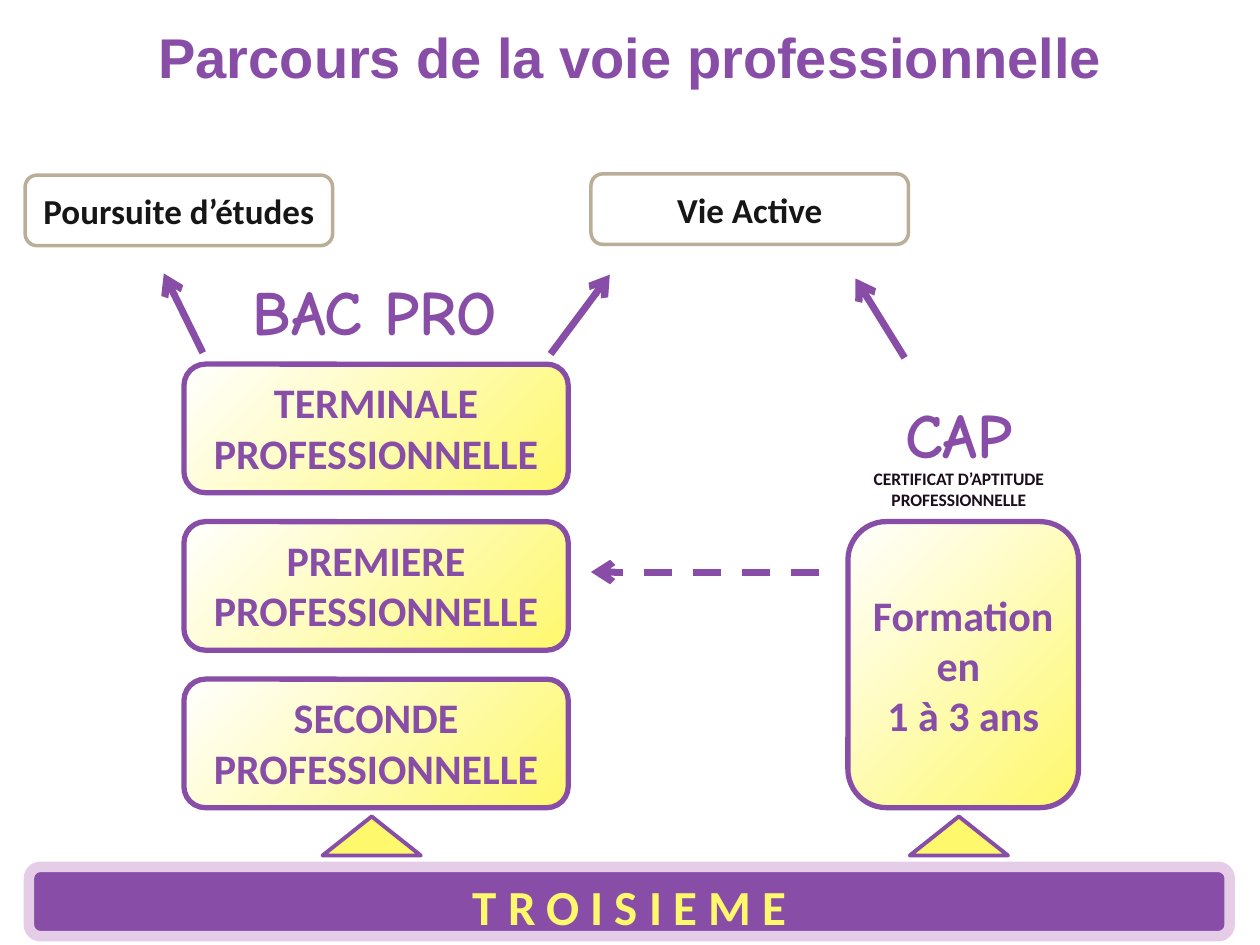
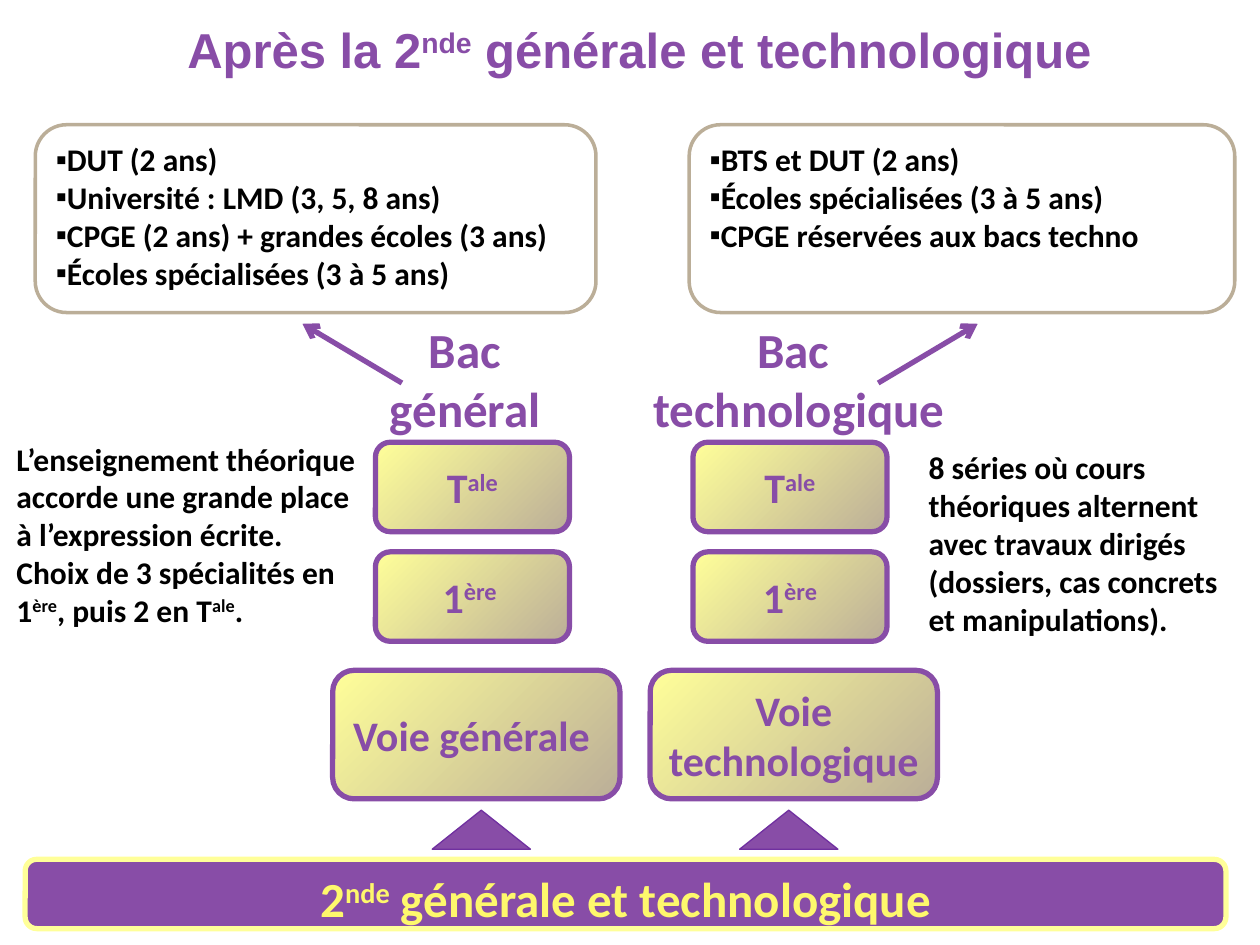
from dataclasses import dataclass, replace

from lxml import etree
from pptx import Presentation
from pptx.dml.color import RGBColor
from pptx.enum.dml import MSO_LINE_DASH_STYLE
from pptx.enum.shapes import MSO_CONNECTOR, MSO_SHAPE
from pptx.enum.text import MSO_ANCHOR, MSO_AUTO_SIZE, PP_ALIGN
from pptx.oxml.ns import qn
from pptx.util import Emu, Pt

ROUNDED, TRIANGLE = MSO_SHAPE.ROUNDED_RECTANGLE, MSO_SHAPE.ISOSCELES_TRIANGLE
STRAIGHT, DASH = MSO_CONNECTOR.STRAIGHT, MSO_LINE_DASH_STYLE.DASH
TOP, MIDDLE = MSO_ANCHOR.TOP, MSO_ANCHOR.MIDDLE
LEFT, CENTER = PP_ALIGN.LEFT, PP_ALIGN.CENTER
NO_AUTOFIT = MSO_AUTO_SIZE.NONE

EMU_PER_PX = 9144  # 100 px to the inch
TITLE_ONLY, TWO_CONTENT = 5, 3

PURPLE, YELLOW, PALE_YELLOW = "884DA7", "FEF86C", "FFFF99"
TAUPE, LILAC, DARK_PURPLE = "BBAE98", "E6CDE7", "7030A0"
WHITE, BLACK, INK, PLUM_BLACK = "FFFFFF", "000000", "161616", "1B0D1C"


def px(length):
    return Emu(round(length * EMU_PER_PX))


def rgb(value):
    return RGBColor.from_string(value)


@dataclass(frozen=True)
class TextStyle:
    size: int
    color: str = PURPLE
    font: str = "Calibri"
    align: int = CENTER
    spacing: float = 1.0


STEP = TextStyle(24)
DIPLOMA = TextStyle(28)
DIPLOMA_HAND = TextStyle(36, font="Comic Neue")
BAND = TextStyle(28, YELLOW)
OUTCOME = TextStyle(20, INK)
CAPTION = TextStyle(10, PLUM_BLACK)
NOTE = TextStyle(18, BLACK, align=LEFT)


class Page:
    """One slide, with the diagram's style of steps, bands, frames and arrows."""

    def __init__(self, deck, layout):
        self.slide = deck.slides.add_slide(deck.slide_layouts[layout])
        self.shapes = self.slide.shapes

    def add_lines(self, frame, lines, style, anchor=TOP):
        """Add one paragraph per line; text between carets is superscript."""
        frame.auto_size = NO_AUTOFIT
        frame.vertical_anchor = anchor
        frame.margin_left = frame.margin_right = px(9)
        frame.margin_top = frame.margin_bottom = px(5)
        for line in lines:
            para = frame.add_paragraph() if frame.text else frame.paragraphs[0]
            para.alignment = style.align
            para.line_spacing = style.spacing
            para.space_before = Pt(0)
            para.font.name = style.font
            para.font.size = Pt(style.size)
            para.font.bold = True
            para.font.color.rgb = rgb(style.color)
            for index, piece in enumerate(line.split("^")):
                if piece:
                    span = para.add_run()
                    span.text = piece
                    if index % 2:
                        span._r.get_or_add_rPr().set("baseline", "30000")

    def place(self, shape, left, top, width, height):
        shape.left, shape.top = px(left), px(top)
        shape.width, shape.height = px(width), px(height)

    def outline(self, shape, color, points):
        shape.line.color.rgb = rgb(color)
        shape.line.width = Pt(points)

    def title(self, text, size, *bounds):
        title = self.shapes.title
        self.place(title, *bounds)
        title.text_frame.word_wrap = True
        self.add_lines(title.text_frame, [text], TextStyle(size, font="Arial"), MIDDLE)

    def text(self, lines, style, *bounds, wrap=True):
        frame = self.shapes.add_textbox(*map(px, bounds)).text_frame
        frame.word_wrap = wrap
        self.add_lines(frame, lines, style)
        return frame

    def shape(self, kind, bounds, fill, line, points):
        """Fill is None, one colour, or a pair for a diagonal gradient."""
        shape = self.shapes.add_shape(kind, *map(px, bounds))
        shape.shadow.inherit = False
        if fill is None:
            shape.fill.background()
        elif isinstance(fill, str):
            shape.fill.solid()
            shape.fill.fore_color.rgb = rgb(fill)
        else:
            shape.fill.gradient()
            shape.fill.gradient_angle = 315
            for stop, color in zip(shape.fill.gradient_stops, fill):
                stop.color.rgb = rgb(color)
        self.outline(shape, line, points)
        return shape

    def step(self, lines, colors, *bounds, anchor=MIDDLE):
        box = self.shape(ROUNDED, bounds, colors, PURPLE, 3)
        self.add_lines(box.text_frame, lines, STEP, anchor)

    def outcome(self, text, *bounds):
        box = self.shape(ROUNDED, bounds, None, TAUPE, 2)
        self.add_lines(box.text_frame, [text], OUTCOME, MIDDLE)

    def band(self, text, left, top, line, points):
        box = self.shape(ROUNDED, (left, top, 953, 55), PURPLE, line, points)
        self.add_lines(box.text_frame, [text], BAND)

    def pointer(self, left, top, fill, line, points):
        self.shape(TRIANGLE, (left, top, 78, 31), fill, line, points)

    def arrow(self, start, end, points, dashed=False):
        arrow = self.shapes.add_connector(STRAIGHT, *map(px, (*start, *end)))
        self.outline(arrow, PURPLE, points)
        if dashed:
            arrow.line.dash_style = DASH
        properties = arrow._element.spPr
        etree.SubElement(properties.find(qn("a:ln")), qn("a:tailEnd"), type="arrow")
        etree.SubElement(properties, qn("a:effectLst"))

    def framed_list(self, index, items, *bounds):
        """Turn a body placeholder into a rounded frame with square bullets."""
        body = self.slide.placeholders[index]
        self.place(body, *bounds)
        geometry = etree.SubElement(body._element.spPr, qn("a:prstGeom"), prst="roundRect")
        etree.SubElement(geometry, qn("a:avLst"))
        body.fill.background()
        self.outline(body, TAUPE, 2)
        self.add_lines(body.text_frame, items, NOTE)
        for para in body.text_frame.paragraphs:
            properties = para._p.get_or_add_pPr()
            properties.set("marL", "0")
            properties.set("indent", "0")
            bullet = etree.Element(qn("a:buChar"), char="▪")
            properties.find(qn("a:defRPr")).addprevious(bullet)


def vocational_page(deck):
    page = Page(deck, TITLE_ONLY)
    page.title("Parcours de la voie professionnelle", 32, 16, 14, 969, 61)
    page.text(["BAC PRO"], DIPLOMA_HAND, 166, 211, 263, 69)
    cap = page.text(["CAP"], DIPLOMA_HAND, 713, 309, 96, 100, wrap=False)
    page.add_lines(cap, ["CERTIFICAT D’APTITUDE"], replace(CAPTION, spacing=0.85))
    page.add_lines(cap, ["PROFESSIONNELLE"], CAPTION)

    colors = (WHITE, YELLOW)
    for row, year in enumerate(("TERMINALE", "PREMIERE", "SECONDE")):
        page.step([year, "PROFESSIONNELLE"], colors,
                  146, 289 + 125 * row, 305, 102, anchor=TOP)
    page.step(["Formation en ", "1 à 3 ans"], colors, 673, 414, 183, 227)

    page.band("T R O I S I E M E", 23, 688, LILAC, 6)
    for left in (256, 722):
        page.pointer(left, 648, YELLOW, PURPLE, 2.25)
    page.outcome("Vie Active", 469, 138, 252, 56)
    page.outcome("Poursuite d’études", 20, 139, 244, 56)

    page.arrow((650, 454), (469, 454), 4, dashed=True)
    for start, end in (((718, 284), (679, 221)),
                       ((437, 281), (484, 218)),
                       ((161, 280), (130, 217))):
        page.arrow(start, end, 4)


def general_page(deck):
    page = Page(deck, TWO_CONTENT)
    page.title("Après la 2^nde^ générale et technologique", 28, 39, 7, 937, 63)
    page.framed_list(1, ["DUT (2 ans)",
                         "Université : LMD (3, 5, 8 ans)",
                         "CPGE (2 ans) + grandes écoles (3 ans)",
                         "Écoles spécialisées (3 à 5 ans)"], 28, 99, 445, 149)
    page.framed_list(2, ["BTS et DUT (2 ans)",
                         "Écoles spécialisées (3 à 5 ans)",
                         "CPGE réservées aux bacs techno"], 547, 99, 433, 149)
    page.text(["Bac ", "général "], DIPLOMA, 295, 249, 157, 102)
    page.text(["Bac ", "technologique "], DIPLOMA, 508, 249, 252, 102)

    colors = (PALE_YELLOW, TAUPE)
    for left, track, first_year in ((264, "Voie générale ", "1^ère ^"),
                                    (516, "Voie technologique ", "1^ère^")):
        page.step(["T^ale^"], colors, left + 34, 351, 154, 71)
        page.step([first_year], colors, left + 34, 438, 154, 71)
        page.step([track], colors, left, 532, 228, 102)
    for left in (343, 587):
        page.pointer(left, 643, PURPLE, DARK_PURPLE, 0.75)
    page.band("2^nde^ générale et technologique", 20, 682, PALE_YELLOW, 3)

    page.arrow((319, 304), (240, 257), 3)
    page.arrow((697, 304), (776, 257), 3)
    page.text(["L’enseignement théorique accorde une grande place à l’expression écrite.",
               "Choix de 3 spécialités en 1^ère^, puis 2 en T^ale^."],
              NOTE, 4, 344, 291, 108)
    page.text(["8 séries où cours théoriques alternent avec travaux dirigés "
               "(dossiers, cas concrets et manipulations)."],
              NOTE, 728, 351, 256, 100)


def main():
    deck = Presentation()
    deck.slide_width, deck.slide_height = px(1000), px(750)
    vocational_page(deck)
    general_page(deck)
    deck.save("out.pptx")


if __name__ == "__main__":
    main()
